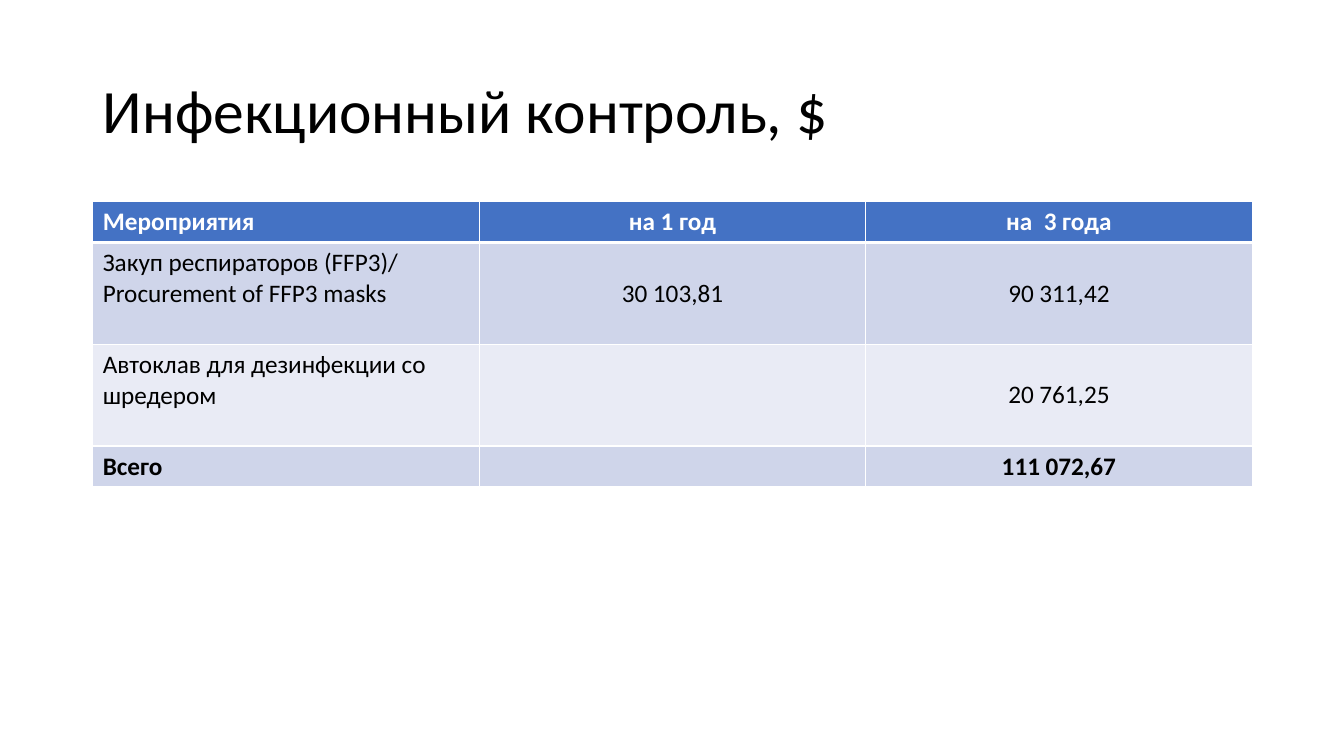
from dataclasses import dataclass

from lxml import etree
from pptx import Presentation
from pptx.dml.color import RGBColor
from pptx.enum import text as tx
from pptx.oxml import ns
from pptx.util import Inches, Pt

WHITE = RGBColor(0xFF, 0xFF, 0xFF)
BLACK = RGBColor(0, 0, 0)
BLUE = RGBColor(0x44, 0x72, 0xC4)
BAND = RGBColor(0xCF, 0xD5, 0xEA)
PALE = RGBColor(0xE9, 0xEB, 0xF5)
FONT = "Calibri"
LEFT, WIDTH = 0.92, 11.5


@dataclass
class Row:
    cells: tuple[str, str, str]
    high: float
    fill: RGBColor
    ink: RGBColor = BLACK
    bold: bool = False
    base: float = 1  # bottom border, points


ROWS = [
    Row(("Мероприятия", "на 1 год", "на  3 года"), 0.4, BLUE, WHITE, True, 3),
    Row(("Закуп респираторов (FFP3)/ Procurement of FFP3 masks",
         "30 103,81", "90 311,42"), 1.01, BAND),
    Row(("Автоклав для дезинфекции со шредером", "", "20 761,25"), 1.01, PALE),
    Row(("Всего", "", "111 072,67"), 0.4, BAND, bold=True),
]


def style(par, size: float, ink: RGBColor, bold: bool = False) -> None:
    for run in par.runs:
        font = run.font
        font.name, font.size, font.bold = FONT, Pt(size), bold
        font.color.rgb = ink


def edge(cell, side: str, size: float) -> None:
    props = cell._tc.get_or_add_tcPr()
    line = etree.SubElement(props, ns.qn(f"a:ln{side}"), w=str(Pt(size)))
    fill = etree.SubElement(line, ns.qn("a:solidFill"))
    etree.SubElement(fill, ns.qn("a:srgbClr"), val=str(WHITE))


def draw_title(slide, words: str) -> None:
    title = slide.shapes.title
    title.left, title.top = Inches(LEFT), Inches(0.4)
    title.width, title.height = Inches(WIDTH), Inches(1.45)
    frame = title.text_frame
    frame.text = words
    frame.vertical_anchor = tx.MSO_ANCHOR.MIDDLE
    par = frame.paragraphs[0]
    par.alignment = tx.PP_ALIGN.LEFT
    par.line_spacing = 0.9
    style(par, 44, BLACK)


def draw_cell(cell, words: str, row: Row, top: float, first: bool) -> None:
    for side, size in (("L", 1), ("R", 1), ("T", top), ("B", row.base)):
        edge(cell, side, size)
    cell.fill.solid()
    cell.fill.fore_color.rgb = row.fill
    cell.text_frame.text = words
    par = cell.text_frame.paragraphs[0]
    par.font.size = Pt(18)
    if not first:
        cell.vertical_anchor = tx.MSO_ANCHOR.MIDDLE
        par.alignment = tx.PP_ALIGN.CENTER
    style(par, 18, row.ink, row.bold)


def draw_table(slide, rows: list[Row]) -> None:
    count = len(rows[0].cells)
    high = sum(row.high for row in rows)
    table = slide.shapes.add_table(
        len(rows), count, Inches(LEFT), Inches(2), Inches(WIDTH), Inches(high)
    ).table
    for col in table.columns:
        col.width = Inches(WIDTH / count)
    top = 1
    for r, row in enumerate(rows):
        table.rows[r].height = Inches(row.high)
        for c, words in enumerate(row.cells):
            draw_cell(table.cell(r, c), words, row, top, c == 0)
        top = row.base


def main() -> None:
    deck = Presentation()
    deck.slide_width, deck.slide_height = Inches(13.33), Inches(7.5)
    # Title-only layout
    slide = deck.slides.add_slide(deck.slide_layouts[5])
    draw_title(slide, "Инфекционный контроль, $")
    # Budget table
    draw_table(slide, ROWS)
    deck.save("out.pptx")


if __name__ == "__main__":
    main()
